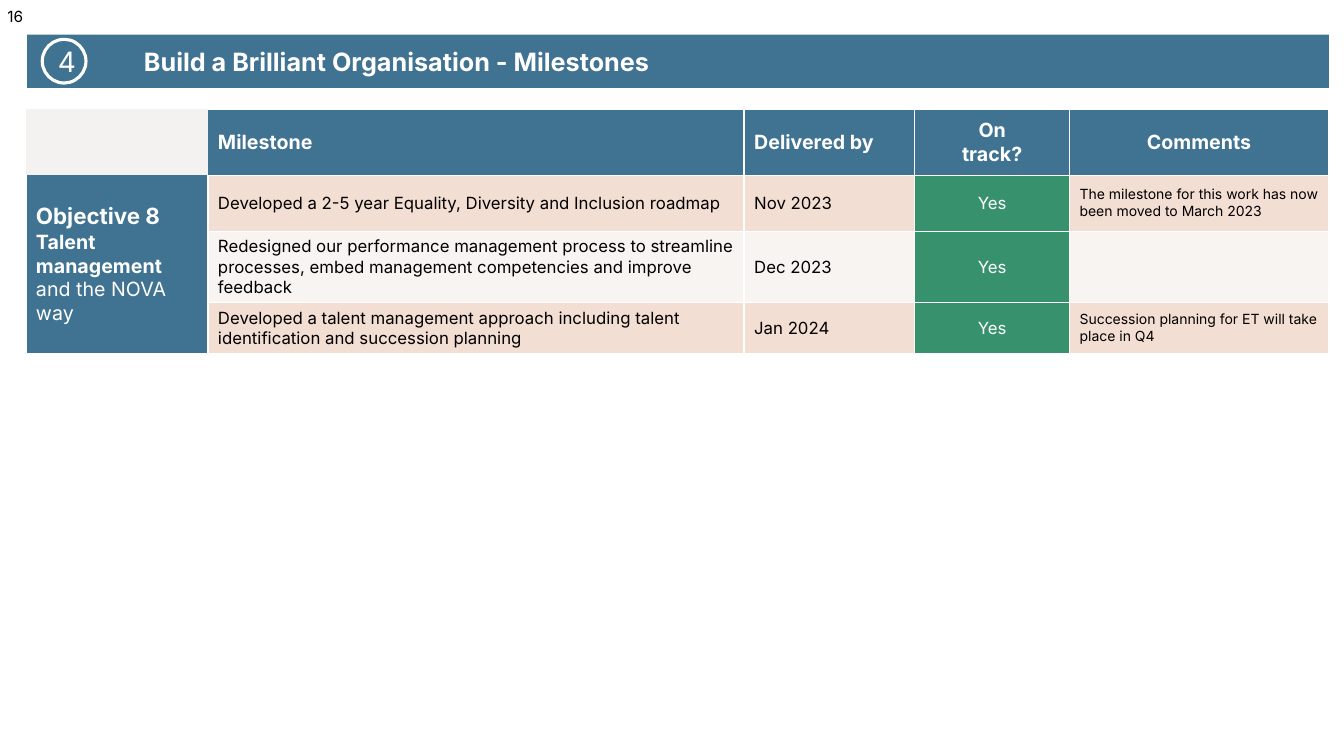
from dataclasses import dataclass

from lxml import etree
from pptx import Presentation
from pptx.dml.color import RGBColor
from pptx.enum.shapes import MSO_SHAPE
from pptx.enum.text import MSO_ANCHOR, MSO_AUTO_SIZE, PP_ALIGN
from pptx.oxml.ns import qn
from pptx.util import Pt

LEFT, CENTER = PP_ALIGN.LEFT, PP_ALIGN.CENTER
MIDDLE = MSO_ANCHOR.MIDDLE
NO_FIT = MSO_AUTO_SIZE.NONE
OVAL = MSO_SHAPE.OVAL
TITLE_ONLY = 5


@dataclass(frozen=True)
class Theme:
    font: str = "Inter"
    blue: str = "407291"
    green: str = "37916D"
    grey: str = "F3F2F1"
    peach: str = "F3DED3"
    cream: str = "F7F4F1"
    white: str = "FFFFFF"
    black: str = "000000"
    page_number: int = 11
    title: int = 18
    badge: int = 20
    objective: int = 16
    heading: int = 14
    body: int = 12
    comment: int = 10


THEME = Theme()

COLUMN_WIDTHS = (130, 383, 122, 110.5, 185)
ROW_HEIGHTS = (47, 40, 51, 36)
COLUMN_ALIGNS = (LEFT, LEFT, LEFT, CENTER, LEFT)
HEADINGS = (
    ("Milestone", LEFT),
    ("Delivered by", LEFT),
    ("On\ntrack?", CENTER),
    ("Comments", CENTER),
)
MILESTONES = (
    ("Developed a 2-5 year Equality, Diversity and Inclusion roadmap",
     "Nov 2023", "Yes",
     "The milestone for this work has now been moved to March 2023"),
    ("Redesigned our performance management process to streamline processes, "
     "embed management competencies and improve feedback",
     "Dec 2023", "Yes", ""),
    ("Developed a talent management approach including talent identification "
     "and succession planning",
     "Jan 2024", "Yes",
     "Succession planning for ET will take place in Q4"),
)


def style_para(para, size, color, bold=False, align=LEFT):
    para.alignment = align
    para.font.name = THEME.font
    para.font.size = Pt(size)
    para.font.bold = bold
    para.font.color.rgb = RGBColor.from_string(color)


def write_text(frame, text, size, color, bold=False, align=LEFT):
    frame.text = text
    for para in frame.paragraphs:
        style_para(para, size, color, bold, align)


def paint(fill, color):
    fill.solid()
    fill.fore_color.rgb = RGBColor.from_string(color)


def place(shape, left, top, width, height):
    shape.left, shape.top = Pt(left), Pt(top)
    shape.width, shape.height = Pt(width), Pt(height)


def clear_margins(frame):
    frame.margin_left = frame.margin_right = 0
    frame.margin_top = frame.margin_bottom = 0


def set_borders(cell, visible):
    properties = cell._tc.get_or_add_tcPr()
    for position, edge in enumerate("LRTB"):
        line = etree.Element(qn("a:ln" + edge), w=str(Pt(1)))
        if edge in visible:
            solid = etree.SubElement(line, qn("a:solidFill"))
            etree.SubElement(solid, qn("a:srgbClr"), val=THEME.white)
        else:
            etree.SubElement(line, qn("a:noFill"))
        properties.insert(position, line)


def format_cell(cell, color, borders="LRTB"):
    paint(cell.fill, color)
    cell.vertical_anchor = MIDDLE
    set_borders(cell, borders)


def add_page_number(page):
    box = page.shapes.add_textbox(Pt(0), Pt(3), Pt(22), Pt(18))
    frame = box.text_frame
    frame.word_wrap = True
    frame.vertical_anchor = MIDDLE
    clear_margins(frame)
    write_text(frame, "16", THEME.page_number, THEME.black, align=CENTER)


def add_title_band(page):
    band = page.shapes.title
    place(band, 19.3, 24.8, 930, 38)
    paint(band.fill, THEME.blue)
    frame = band.text_frame
    frame.auto_size = NO_FIT
    frame.vertical_anchor = MIDDLE
    frame.margin_left = Pt(83.5)
    write_text(frame, "Build a Brilliant Organisation - Milestones",
               THEME.title, THEME.white, bold=True)


def add_badge(page):
    badge = page.shapes.add_shape(OVAL, Pt(30.2), Pt(28.1), Pt(31.2), Pt(31.2))
    badge.shadow.inherit = False
    badge.fill.background()
    badge.line.color.rgb = RGBColor.from_string(THEME.white)
    badge.line.width = Pt(2.25)
    frame = badge.text_frame
    frame.vertical_anchor = MIDDLE
    clear_margins(frame)
    frame.margin_left = Pt(4)
    write_text(frame, "4", THEME.badge, THEME.white, align=CENTER)


def fill_objective(cell):
    frame = cell.text_frame
    write_text(frame, "Objective 8", THEME.objective, THEME.white, bold=True)
    para = frame.add_paragraph()
    style_para(para, THEME.heading, THEME.white)
    for text, bold in (("Talent management ", True), ("and the NOVA way", False)):
        span = para.add_run()
        span.text = text
        span.font.bold = bold


def add_milestone_table(page):
    table = page.shapes.add_table(
        len(ROW_HEIGHTS), len(COLUMN_WIDTHS), Pt(18.5), Pt(78.2),
        Pt(sum(COLUMN_WIDTHS)), Pt(sum(ROW_HEIGHTS))).table
    table.first_row = table.horz_banding = False
    for column, width in zip(table.columns, COLUMN_WIDTHS):
        column.width = Pt(width)
    for row, height in zip(table.rows, ROW_HEIGHTS):
        row.height = Pt(height)

    format_cell(table.cell(0, 0), THEME.grey, "")
    for column, (text, align) in enumerate(HEADINGS, 1):
        cell = table.cell(0, column)
        format_cell(cell, THEME.blue, "RTB" if column == 1 else "LRTB")
        write_text(cell.text_frame, text, THEME.heading, THEME.white, True, align)

    objective = table.cell(1, 0)
    objective.merge(table.cell(len(MILESTONES), 0))
    format_cell(objective, THEME.blue, "LRB")
    fill_objective(objective)

    sizes = (THEME.body, THEME.body, THEME.body, THEME.comment)
    for row, texts in enumerate(MILESTONES, 1):
        band = THEME.peach if row % 2 else THEME.cream
        for column, (text, size) in enumerate(zip(texts, sizes), 1):
            status = column == 3
            cell = table.cell(row, column)
            format_cell(cell, THEME.green if status else band)
            write_text(cell.text_frame, text, size,
                       THEME.white if status else THEME.black,
                       align=COLUMN_ALIGNS[column])


def main():
    deck = Presentation()
    deck.slide_width, deck.slide_height = Pt(960), Pt(540)
    page = deck.slides.add_slide(deck.slide_layouts[TITLE_ONLY])
    add_page_number(page)
    add_title_band(page)
    add_badge(page)
    add_milestone_table(page)
    deck.save("out.pptx")


if __name__ == "__main__":
    main()
